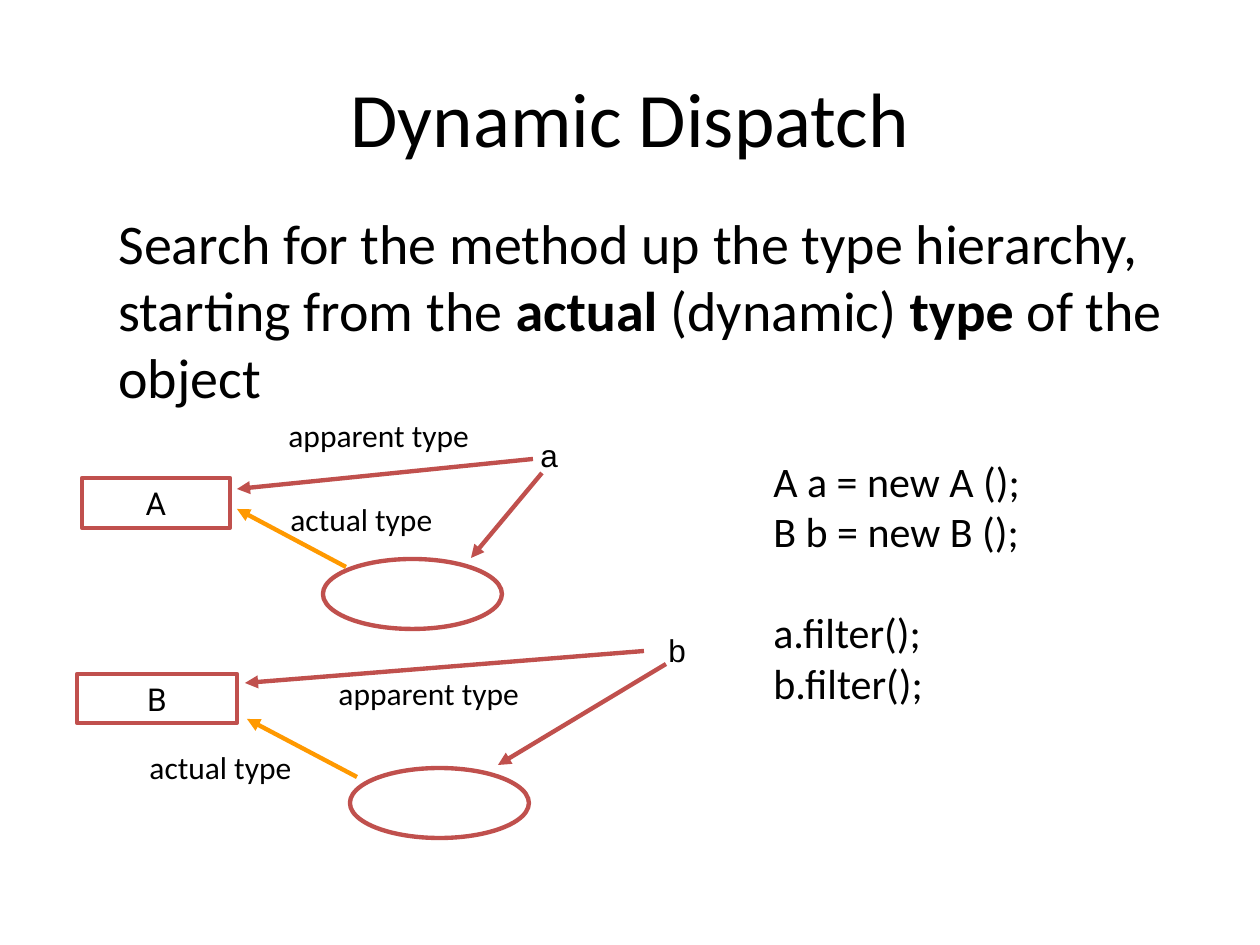
"""Build the Dynamic Dispatch slide with its two type diagrams."""
from lxml import etree
from pptx import Presentation
from pptx.dml.color import RGBColor
from pptx.enum.shapes import MSO_CONNECTOR, MSO_SHAPE
from pptx.enum.text import MSO_ANCHOR, PP_ALIGN
from pptx.oxml.ns import qn
from pptx.util import Pt

EMU_PER_PX = 914400 // 126
BLACK = RGBColor(0x00, 0x00, 0x00)
RED = RGBColor(0xC0, 0x50, 0x4D)
ORANGE = RGBColor(0xFF, 0x99, 0x00)
RECTANGLE, OVAL = MSO_SHAPE.RECTANGLE, MSO_SHAPE.OVAL
STRAIGHT = MSO_CONNECTOR.STRAIGHT
CENTER = PP_ALIGN.CENTER
MIDDLE = MSO_ANCHOR.MIDDLE
LINE_WIDTH = Pt(2.5)


def px(*lengths):
    return [length * EMU_PER_PX for length in lengths]


def style_runs(paragraph, size, font):
    for run in paragraph.runs:
        run.font.size = Pt(size)
        run.font.name = font
        run.font.color.rgb = BLACK


def add_text(slide, box, text, size=18, font="Calibri", wrap=False):
    text_frame = slide.shapes.add_textbox(*px(*box)).text_frame
    text_frame.word_wrap = wrap
    text_frame.text = text
    for paragraph in text_frame.paragraphs:
        style_runs(paragraph, size, font)
    return text_frame


def add_title(slide, text):
    text_frame = add_text(slide, (63, 38, 1134, 158), text, 44, wrap=True)
    text_frame.vertical_anchor = MIDDLE
    text_frame.paragraphs[0].alignment = CENTER


def add_explanation(slide, parts):
    text_frame = add_text(slide, (106, 202, 1091, 220), "", wrap=True)
    paragraph = text_frame.paragraphs[0]
    for text, bold in parts:
        run = paragraph.add_run()
        run.text = text
        run.font.bold = bold
    style_runs(paragraph, 32, "Calibri")


def add_code(slide, declarations, calls):
    lines = "\n".join(declarations + calls)
    text_frame = add_text(slide, (761, 449, 273, 267), lines, 24)
    text_frame.paragraphs[len(declarations)].space_before = Pt(29)


def add_outline(slide, kind, box, text=""):
    shape = slide.shapes.add_shape(kind, *px(*box))
    shape.shadow.inherit = False
    shape.fill.background()
    shape.line.color.rgb = RED
    shape.line.width = LINE_WIDTH
    if text:
        text_frame = shape.text_frame
        text_frame.text = text
        text_frame.vertical_anchor = MIDDLE
        text_frame.paragraphs[0].alignment = CENTER
        style_runs(text_frame.paragraphs[0], 18, "Roboto")


def add_arrow(slide, start, end, color=RED):
    connector = slide.shapes.add_connector(STRAIGHT, *px(*start, *end))
    connector.line.color.rgb = color
    connector.line.width = LINE_WIDTH
    line = connector.line._get_or_add_ln()
    etree.SubElement(line, qn("a:tailEnd"), type="triangle")
    etree.SubElement(connector._element.spPr, qn("a:effectLst"))


def add_diagram(slide, type_name, type_box, variable, variable_at, object_at,
                apparent, actual, reference, apparent_at, actual_at):
    add_outline(slide, RECTANGLE, type_box, type_name)
    add_outline(slide, OVAL, (*object_at, 179, 70))
    add_text(slide, (*variable_at, 43, 50), variable, font="Arial", wrap=True)
    add_arrow(slide, *reference)
    add_arrow(slide, *actual, ORANGE)
    add_arrow(slide, *apparent)
    add_text(slide, (*apparent_at, 208, 50), "apparent type")
    add_text(slide, (*actual_at, 169, 50), "actual type")


def main():
    presentation = Presentation()
    presentation.slide_width, presentation.slide_height = px(1260, 945)
    slide = presentation.slides.add_slide(presentation.slide_layouts[6])
    add_title(slide, "Dynamic Dispatch")
    add_explanation(slide, [
        ("Search for the method up the type hierarchy, starting from the ", False),
        ("actual", True), (" (dynamic) ", False),
        ("type", True), (" of the object", False)])
    add_code(slide, ["A a = new A ();", "B b = new B ();"],
             ["a.filter();", "b.filter();"])
    add_diagram(slide, "A", (82, 478, 148, 50), "a", (528, 430), (323, 559),
                apparent=((533, 459), (237, 489)),
                actual=((346, 567), (237, 509)),
                reference=((542, 473), (471, 558)),
                apparent_at=(276, 410), actual_at=(278, 494))
    add_diagram(slide, "B", (77, 674, 160, 49), "b", (656, 625), (350, 768),
                apparent=((644, 651), (245, 683)),
                actual=((357, 777), (247, 719)),
                reference=((666, 664), (498, 765)),
                apparent_at=(326, 668), actual_at=(137, 742))
    presentation.save("out.pptx")


if __name__ == "__main__":
    main()
